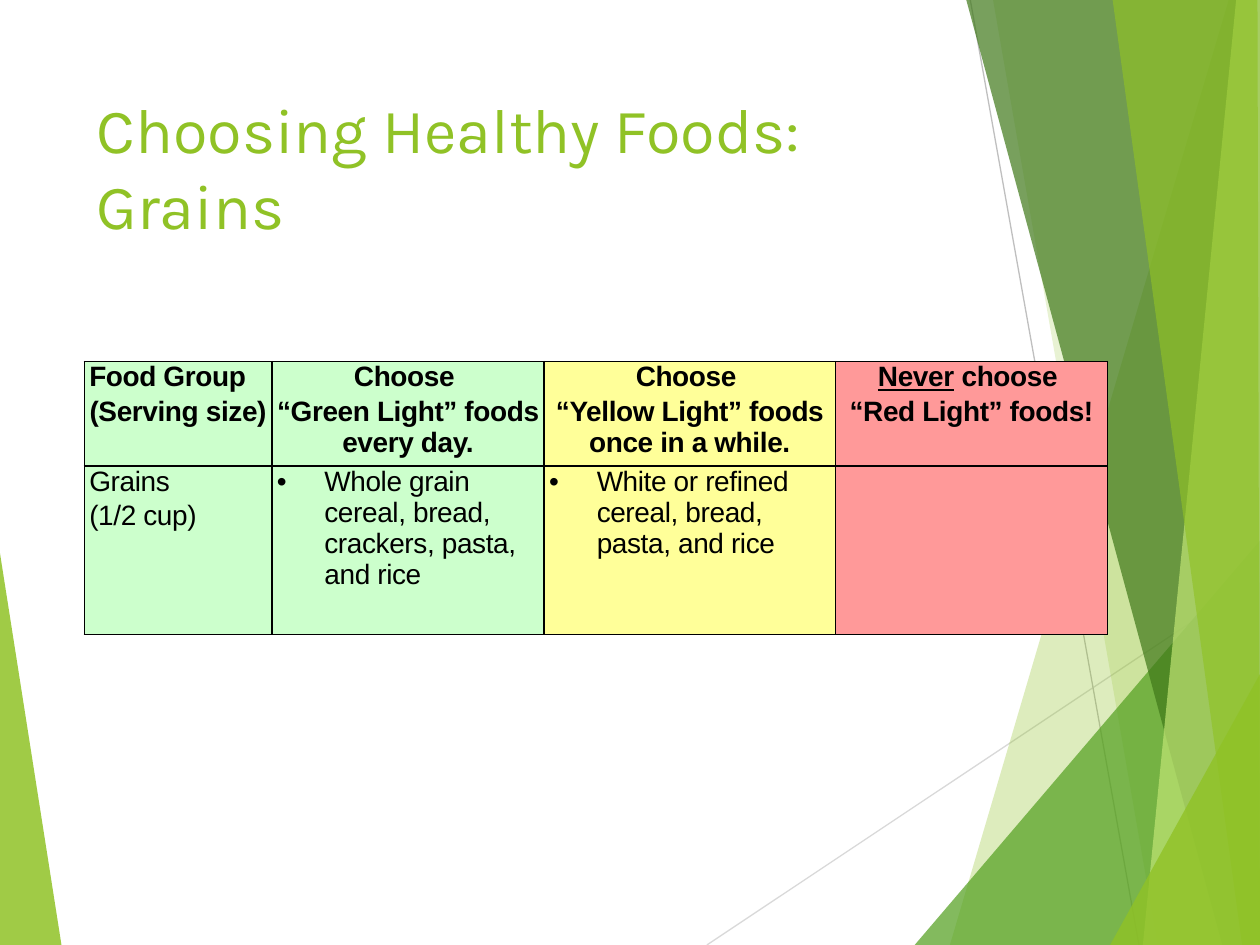
from dataclasses import dataclass

from lxml import etree
from pptx import Presentation
from pptx.dml.color import RGBColor
from pptx.enum.shapes import MSO_CONNECTOR
from pptx.enum.text import MSO_ANCHOR, PP_ALIGN
from pptx.oxml.ns import qn
from pptx.util import Cm, Pt

STRAIGHT = MSO_CONNECTOR.STRAIGHT
LEFT, CENTER, JUSTIFY = PP_ALIGN.LEFT, PP_ALIGN.CENTER, PP_ALIGN.JUSTIFY
TOP = MSO_ANCHOR.TOP
WIDTH, HEIGHT = 25.4, 19.05
BULLET_INDENT = Cm(0.96)


@dataclass(frozen=True)
class Theme:
    """Hold the colours, fonts and sizes of the slide."""
    lime: str = "90C226"
    green: str = "54A021"
    forest: str = "3F7819"
    pale: str = "C0E474"
    light_grey: str = "D9D9D9"
    grey: str = "BFBFBF"
    text: str = "000000"
    go: str = "CCFFCC"
    caution: str = "FFFF99"
    stop: str = "FF9999"
    title_font: str = "Karla"
    body_font: str = "Arial"
    title_size: float = 36
    body_size: float = 16


THEME = Theme()
COLUMN_FILLS = (THEME.go, THEME.go, THEME.caution, THEME.stop)
COLUMN_WIDTHS = (3.78, 5.49, 5.87, 5.49)
ROW_HEIGHTS = (1.95, 3.4)

LINES = (
    ((14.25, HEIGHT), (WIDTH, 11.62), THEME.light_grey),
    ((19.56, 0), (22.96, HEIGHT), THEME.grey),
)
FACETS = (
    (((24.77, 0), (19.15, HEIGHT), (WIDTH, HEIGHT), (WIDTH, 0)), THEME.lime, 30),
    (((20.02, 0), (23.34, HEIGHT), (WIDTH, HEIGHT), (WIDTH, 0)), THEME.lime, 20),
    (((18.44, HEIGHT), (WIDTH, 10.9), (WIDTH, HEIGHT)), THEME.green, 72),
    (((19.48, 0), (24.64, HEIGHT), (WIDTH, HEIGHT), (WIDTH, 0)), THEME.forest, 70),
    (((24.92, 0), (23.04, HEIGHT), (WIDTH, HEIGHT), (WIDTH, 0)), THEME.pale, 70),
    (((22.43, 0), (25.04, HEIGHT), (WIDTH, HEIGHT), (25.35, 0)), THEME.lime, 65),
    (((22.38, HEIGHT), (WIDTH, 13.59), (WIDTH, HEIGHT)), THEME.lime, 80),
)
LEFT_FACET = (((0, 11.15), (1.24, HEIGHT), (0, HEIGHT)), THEME.lime, 85)

HEADERS = (
    ((JUSTIFY, ("Food Group",)), (CENTER, ("(Serving size)",))),
    ((CENTER, ("Choose ",)), (CENTER, ("“Green Light” foods every day.",))),
    ((CENTER, ("Choose ",)), (CENTER, ("“Yellow Light” foods once in a while.",))),
    ((CENTER, ("Never", " choose ")), (CENTER, ("“Red Light” foods!",))),
)
GRAINS = (
    ((LEFT, ("Grains",)), (LEFT, ("(1/2 cup)",))),
    ((LEFT, ("Whole grain cereal, bread, crackers, pasta, and rice",)),),
    ((LEFT, ("White or refined cereal, bread, pasta, and rice",)),),
    (),
)


def add_facet(slide, points, color, opacity):
    """Draw a translucent polygon without an outline."""
    corners = [(Cm(x), Cm(y)) for x, y in points]
    builder = slide.shapes.build_freeform(*corners[0])
    builder.add_line_segments(corners[1:], close=True)
    shape = builder.convert_to_shape()
    shape.shadow.inherit = False
    shape.fill.solid()
    shape.fill.fore_color.rgb = RGBColor.from_string(color)
    shape.line.fill.background()
    color_element = shape._element.spPr.find(qn("a:solidFill"))[0]
    etree.SubElement(color_element, qn("a:alpha"), val=str(opacity * 1000))


def add_line(slide, start, end, color):
    """Draw a thin straight line."""
    line = slide.shapes.add_connector(STRAIGHT, *map(Cm, start + end))
    line.line.color.rgb = RGBColor.from_string(color)
    line.line.width = Pt(0.75)
    etree.SubElement(line._element.spPr, qn("a:effectLst"))


def add_run(paragraph, text, font_name, size, color):
    """Add one formatted run and return it."""
    run = paragraph.add_run()
    run.text = text
    run.font.name = font_name
    run.font.size = Pt(size)
    run.font.color.rgb = RGBColor.from_string(color)
    return run


def add_title(slide, text):
    """Add the slide title."""
    box = slide.shapes.add_textbox(Cm(1.7), Cm(1.7), Cm(17.63), Cm(3.66))
    frame = box.text_frame
    frame.word_wrap = True
    frame.vertical_anchor = TOP
    add_run(frame.paragraphs[0], text, THEME.title_font, THEME.title_size, THEME.lime)


def add_bullet(paragraph):
    """Give a paragraph a hanging round bullet."""
    properties = paragraph._p.get_or_add_pPr()
    properties.set("marL", str(BULLET_INDENT))
    properties.set("indent", str(-BULLET_INDENT))
    etree.SubElement(properties, qn("a:buFont"), typeface=THEME.body_font)
    etree.SubElement(properties, qn("a:buChar"), char="•")


def add_borders(cell):
    """Outline a cell on all four sides."""
    properties = cell._tc.get_or_add_tcPr()
    for index, side in enumerate(("lnL", "lnR", "lnT", "lnB")):
        line = etree.Element(qn(f"a:{side}"), w=str(Pt(1)))
        fill = etree.SubElement(line, qn("a:solidFill"))
        etree.SubElement(fill, qn("a:srgbClr"), val=THEME.text)
        properties.insert(index, line)


def fill_cell(cell, paragraphs, color, header, bulleted):
    """Format one table cell and write its paragraphs."""
    cell.margin_left = cell.margin_right = Cm(0.1)
    cell.margin_top = cell.margin_bottom = 0
    cell.fill.solid()
    cell.fill.fore_color.rgb = RGBColor.from_string(color)
    add_borders(cell)
    frame = cell.text_frame
    for index, (alignment, texts) in enumerate(paragraphs):
        paragraph = frame.add_paragraph() if index else frame.paragraphs[0]
        paragraph.alignment = alignment
        paragraph.space_before = Pt(2)
        if bulleted:
            add_bullet(paragraph)
        for text in texts:
            run = add_run(paragraph, text, THEME.body_font, THEME.body_size, THEME.text)
            run.font.bold = header
            run.font.underline = text == "Never"
            run.font._element.set("spc", "-20")


def add_food_table(slide):
    """Add the traffic-light table of grains."""
    frame = slide.shapes.add_table(
        len(ROW_HEIGHTS), len(COLUMN_WIDTHS), Cm(1.7), Cm(7.29),
        Cm(sum(COLUMN_WIDTHS)), Cm(sum(ROW_HEIGHTS)))
    table = frame.table
    for column, width in zip(table.columns, COLUMN_WIDTHS):
        column.width = Cm(width)
    for row_index, contents in enumerate((HEADERS, GRAINS)):
        table.rows[row_index].height = Cm(ROW_HEIGHTS[row_index])
        for column_index, paragraphs in enumerate(contents):
            header = row_index == 0
            fill_cell(table.cell(row_index, column_index), paragraphs,
                      COLUMN_FILLS[column_index], header,
                      not header and column_index > 0)


def main():
    """Build and save the slide."""
    presentation = Presentation()
    presentation.slide_width, presentation.slide_height = Cm(WIDTH), Cm(HEIGHT)
    slide = presentation.slides.add_slide(presentation.slide_layouts[6])
    add_facet(slide, *LEFT_FACET)
    for line in LINES:
        add_line(slide, *line)
    for facet in FACETS:
        add_facet(slide, *facet)
    add_title(slide, "Choosing Healthy Foods: Grains")
    add_food_table(slide)
    presentation.save("out.pptx")


if __name__ == "__main__":
    main()
